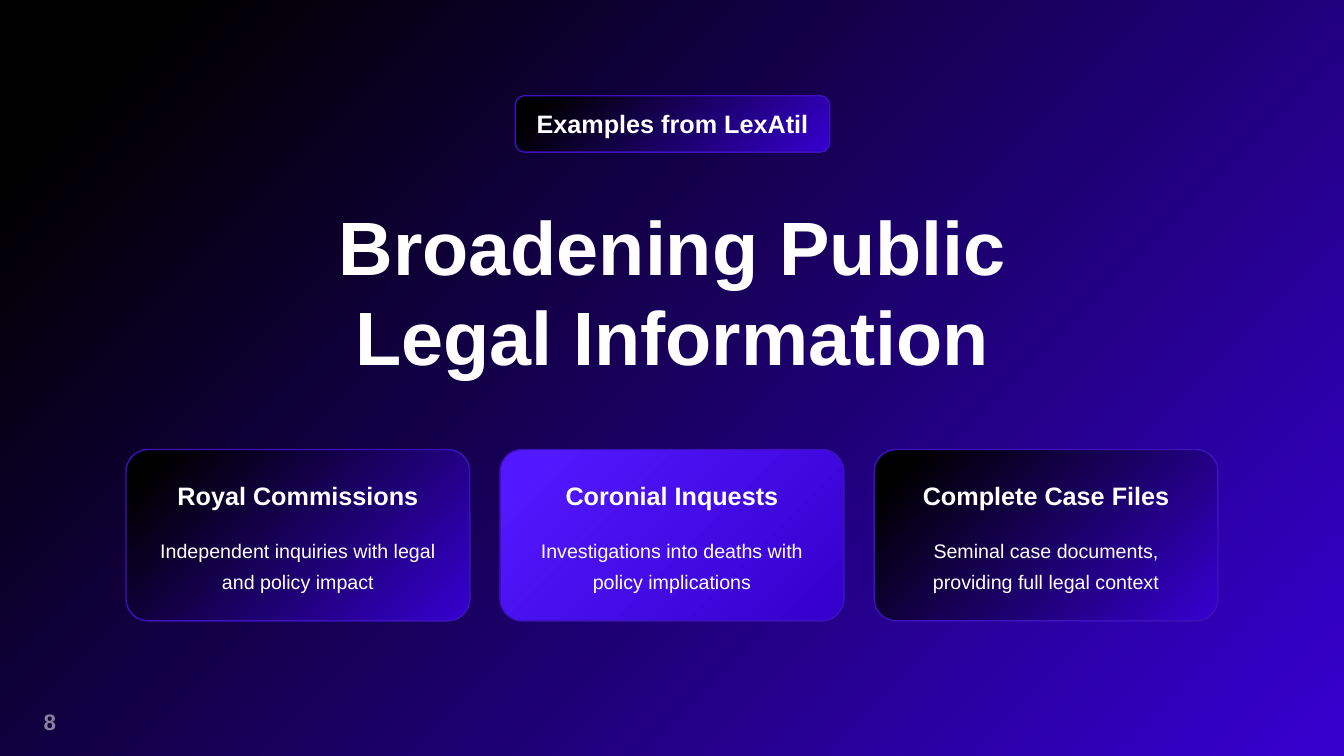
from pptx import Presentation
from pptx import util as u
from pptx.dml.color import RGBColor
from pptx.enum import shapes, text
from pptx.oxml import parse_xml
from pptx.oxml.ns import nsdecls, qn

BLUE, BLACK, VIOLET = "3500CC", "000000", "5218FF"
WHITE, BORDER = "FFFFFF", "3D12BD"

CARDS = [
    ("Royal Commissions", "Independent inquiries with legal and policy impact", BLACK),
    ("Coronial Inquests", "Investigations into deaths with policy implications", VIOLET),
    ("Complete Case Files", "Seminal case documents, providing full legal context", BLACK),
]


def color(value):
    return RGBColor.from_string(value)


def fill_radial(fill, element, outer):
    fill.gradient()
    gradient = element.find(".//" + qn("a:gradFill"))
    stops = "".join(
        f'<a:gs pos="{position * 1000}"><a:srgbClr val="{value}"/></a:gs>'
        for position, value in ((2, BLUE), (91, outer), (100, outer))
    )
    radial = parse_xml(
        f'<a:gradFill {nsdecls("a")} rotWithShape="1"><a:gsLst>{stops}</a:gsLst>'
        '<a:path path="circle"><a:fillToRect l="100000" t="100000"/></a:path>'
        '<a:tileRect r="-100000" b="-100000"/></a:gradFill>'
    )
    gradient.getparent().replace(gradient, radial)


def add_text(parent, box, words, size, bold=True, spacing=None):
    textbox = parent.add_textbox(*map(u.Inches, box))
    frame = textbox.text_frame
    frame.word_wrap = True
    frame.auto_size = text.MSO_AUTO_SIZE.SHAPE_TO_FIT_TEXT
    paragraph = frame.paragraphs[0]
    paragraph.text = words
    paragraph.alignment = text.PP_ALIGN.CENTER
    paragraph.line_spacing = spacing
    paragraph.font.name = "Arial"
    paragraph.font.size = u.Pt(size)
    paragraph.font.bold = bold
    paragraph.font.color.rgb = color(WHITE)
    return textbox


def add_panel(parent, box, outer, rounding):
    panel = parent.add_shape(
        shapes.MSO_SHAPE.ROUNDED_RECTANGLE, *map(u.Inches, box))
    panel.adjustments[0] = rounding
    panel.shadow.inherit = False
    fill_radial(panel.fill, panel._element, outer)
    panel.line.color.rgb = color(BORDER)
    panel.line.width = u.Pt(1)


def add_label(slide, box, words):
    left, top, width, height = box
    group = slide.shapes.add_group_shape().shapes
    add_panel(group, box, BLACK, 0.167)
    add_text(group, (left + 0.05, top + 0.08, width - 0.1, 0.4), words, 18)


def add_card(slide, box, heading, description, outer):
    left, top, width, height = box
    group = slide.shapes.add_group_shape().shapes
    add_panel(group, box, outer, 0.129)
    inner_left, inner_width = left + 0.15, width - 0.3
    add_text(group, (inner_left, top + 0.26, inner_width, 0.4), heading, 18)
    add_text(group, (inner_left, top + 0.77, inner_width, 0.68),
             description, 14, bold=False, spacing=1.3)


def add_cards(slide, box, gap):
    left, top, width, height = box
    card_width = (width - gap * (len(CARDS) - 1)) / len(CARDS)
    for index, card in enumerate(CARDS):
        card_left = left + index * (card_width + gap)
        add_card(slide, (card_left, top, card_width, height), *card)


def add_page_number(slide, box, number):
    textbox = add_text(slide.shapes, box, number, 16)
    textbox.text_frame.vertical_anchor = text.MSO_ANCHOR.MIDDLE
    shade = textbox._element.find(".//" + qn("a:srgbClr"))
    shade.append(parse_xml(f'<a:alpha {nsdecls("a")} val="50000"/>'))


def main():
    presentation = Presentation()
    presentation.slide_width = u.Inches(13.33)
    presentation.slide_height = u.Inches(7.5)
    slide = presentation.slides.add_slide(presentation.slide_layouts[6])
    fill_radial(slide.background.fill, slide._element, BLACK)
    add_page_number(slide, (0.19, 6.97, 0.61, 0.37), "8")
    add_text(slide.shapes, (2.78, 1.93, 7.78, 1.92),
             "Broadening Public Legal Information", 54)
    add_label(slide, (5.11, 0.95, 3.12, 0.56), "Examples from LexAtil")
    add_cards(slide, (1.25, 4.46, 10.83, 1.7), gap=0.3)
    presentation.save("out.pptx")


if __name__ == "__main__":
    main()
